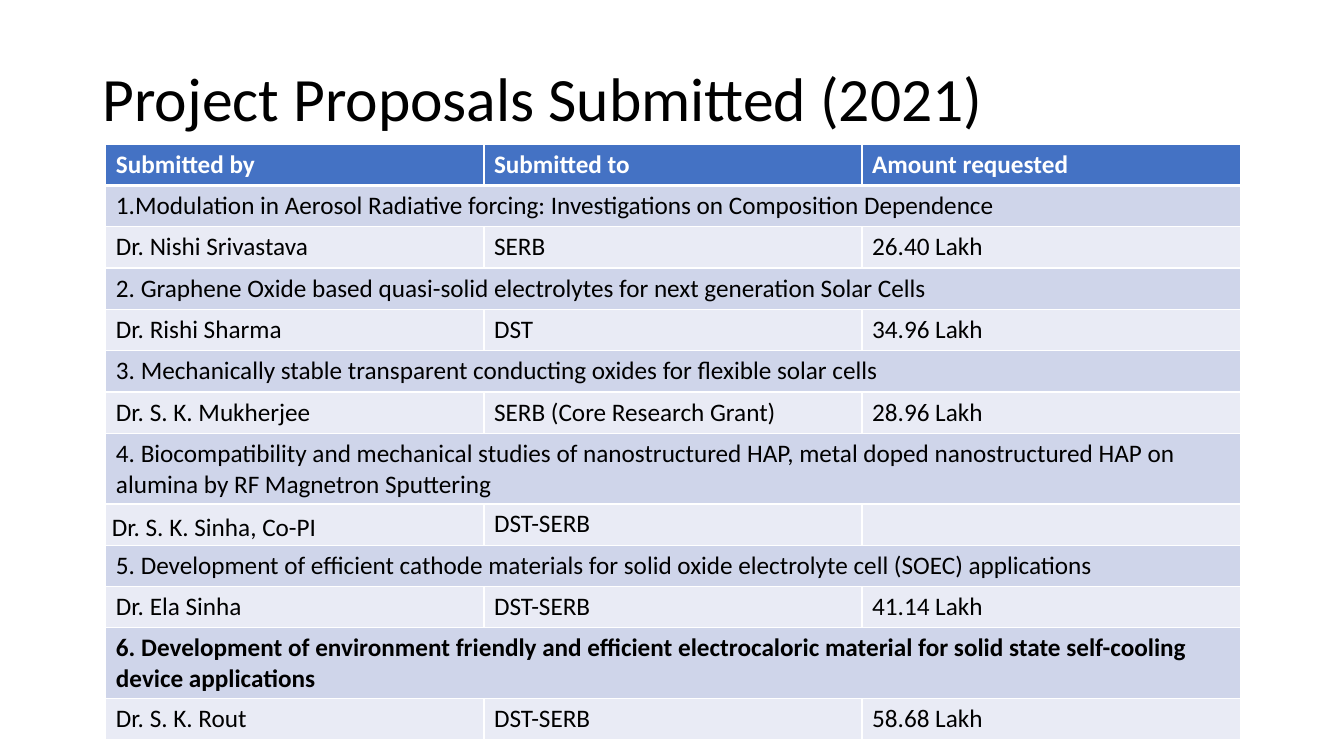
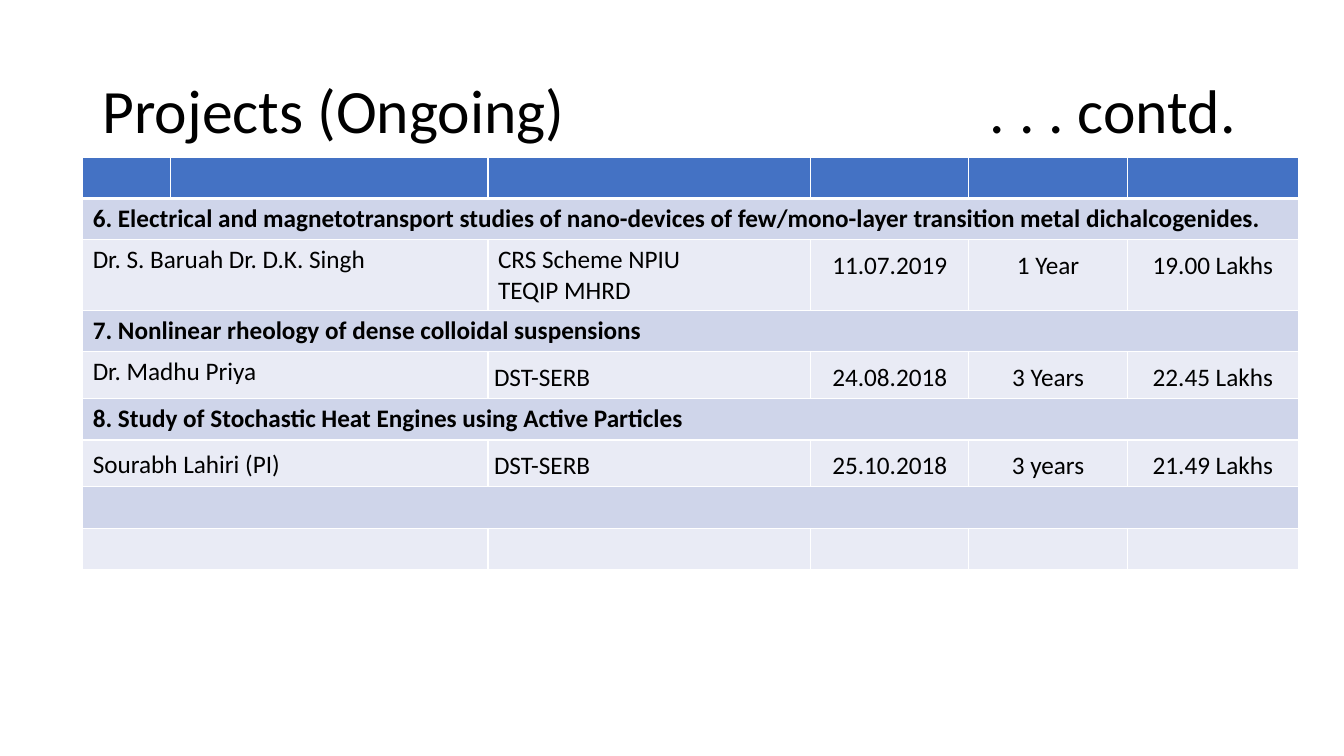
from lxml import etree
from pptx import Presentation
from pptx.dml.color import RGBColor
from pptx.enum.text import MSO_ANCHOR, PP_ALIGN
from pptx.oxml.ns import qn
from pptx.util import Inches, Pt

LEFT, CENTER = PP_ALIGN.LEFT, PP_ALIGN.CENTER
TOP, MIDDLE, BOTTOM = MSO_ANCHOR.TOP, MSO_ANCHOR.MIDDLE, MSO_ANCHOR.BOTTOM

FONT = "Calibri"
BLACK = RGBColor(0x00, 0x00, 0x00)
WHITE = RGBColor(0xFF, 0xFF, 0xFF)
HEADER_BLUE = RGBColor(0x44, 0x72, 0xC4)
PROJECT_BLUE = RGBColor(0xCF, 0xD5, 0xEA)
DETAIL_BLUE = RGBColor(0xE9, 0xEB, 0xF5)
ROW_H = 0.41

# Cell styles: margins (left, top, right, bottom), alignment, spacing, anchor
STYLES = {
    "plain": ((0.1, 0.05, 0.1, 0.05), LEFT, None, TOP),
    "spaced": ((0.1, 0.05, 0.1, 0.05), LEFT, 1.15, TOP),
    "tight": ((0.06, 0.06, 0.06, 0.06), LEFT, 1.15, TOP),
    "center": ((0.06, 0.06, 0.06, 0.06), CENTER, 1.15, TOP),
    "bottom": ((0.06, 0.02, 0.01, 0.02), LEFT, None, BOTTOM),
}

# Each project: title, bold title, then the detail row that follows it
SLIDES = [
    {
        "title": "Project Proposals Submitted (2021)",
        "title_top": 0.28,
        "table_at": (1.05, 1.43),
        "columns": [3.75, 3.75, 3.75],
        "header": ["Submitted by", "Submitted to", "Amount requested"],
        "name_span": 1,
        "projects": [
            ("1.Modulation in Aerosol Radiative forcing: Investigations on Composition Dependence",
             False, ["Dr. Nishi Srivastava", "SERB", "26.40 Lakh"]),
            ("2. Graphene Oxide based quasi-solid electrolytes for next generation Solar Cells",
             False, ["Dr. Rishi Sharma", "DST", "34.96 Lakh"]),
            ("3. Mechanically stable transparent conducting oxides for flexible solar cells",
             False, ["Dr. S. K. Mukherjee", "SERB (Core Research Grant)", "28.96 Lakh"]),
            ("4. Biocompatibility and mechanical studies of nanostructured HAP, metal doped "
             "nanostructured HAP on alumina by RF Magnetron Sputtering",
             False, [("Dr. S. K. Sinha, Co-PI", "bottom"), "DST-SERB", ""]),
            ("5. Development of efficient cathode materials for solid oxide electrolyte cell "
             "(SOEC) applications",
             False, ["Dr. Ela Sinha", "DST-SERB", "41.14 Lakh"]),
            ("6. Development of environment friendly and efficient electrocaloric material "
             "for solid state self-cooling device applications",
             True, ["Dr. S. K. Rout", "DST-SERB", "58.68 Lakh"]),
        ],
    },
    {
        "title": "Projects (Ongoing)\t. . . contd.",
        "title_top": 0.4,
        "table_at": (0.82, 1.56),
        "columns": [0.87, 3.15, 3.2, 1.57, 1.57, 1.7],
        "header": [""] * 6,
        "name_span": 2,
        "projects": [
            ("6. Electrical and magnetotransport studies of nano-devices of few/mono-layer "
             "transition metal dichalcogenides.",
             True, ["Dr. S. Baruah Dr. D.K. Singh", "CRS Scheme NPIU\nTEQIP MHRD",
                    ("11.07.2019", "center"), ("1 Year", "center"), ("19.00 Lakhs", "center")]),
            ("7. Nonlinear rheology of dense colloidal suspensions",
             True, ["Dr. Madhu Priya", ("DST-SERB", "tight"),
                    ("24.08.2018", "center"), ("3 Years", "center"), ("22.45 Lakhs", "center")]),
            ("8. Study of Stochastic Heat Engines using Active Particles",
             True, [("Sourabh Lahiri (PI)", "spaced"), ("DST-SERB", "tight"),
                    ("25.10.2018", "center"), ("3 years", "center"), ("21.49 Lakhs", "center")]),
            ("", False, [""] * 5),
        ],
    },
]


def format_runs(p, size, color, bold=False):
    for r in p.runs:
        r.font.name, r.font.size, r.font.bold = FONT, Pt(size), bold
        r.font.color.rgb = color


def add_title(s, text, top):
    tf = s.shapes.add_textbox(Inches(0.92), Inches(top), Inches(11.5), Inches(1.45)).text_frame
    tf.word_wrap, tf.vertical_anchor = True, MIDDLE
    p = tf.paragraphs[0]
    p.text, p.line_spacing = text, 0.9
    if "\t" in text:
        # A right tab sets the second part against the right edge
        tabs = etree.SubElement(p._p.get_or_add_pPr(), qn("a:tabLst"))
        etree.SubElement(tabs, qn("a:tab"), pos=str(Inches(11.24)), algn="r")
    format_runs(p, 44, BLACK)


def set_borders(cell, bottom, top):
    tc_pr = cell._tc.get_or_add_tcPr()
    for i, (side, width) in enumerate(zip("LRTB", (1, 1, top, bottom))):
        line = etree.Element(qn(f"a:ln{side}"), w=str(Pt(width)))
        fill = etree.SubElement(line, qn("a:solidFill"))
        etree.SubElement(fill, qn("a:srgbClr"), val=str(WHITE))
        tc_pr.insert(i, line)


def fill_cell(cell, content, color=BLACK, bold=False):
    text, style = content if isinstance(content, tuple) else (content, "plain")
    margins, align, spacing, anchor = STYLES[style]
    cell.margin_left, cell.margin_top, cell.margin_right, cell.margin_bottom = map(Inches, margins)
    cell.vertical_anchor = anchor
    cell.text_frame.text = text
    for p in cell.text_frame.paragraphs:
        p.alignment = align
        if spacing:
            p.line_spacing = spacing
        format_runs(p, 18, color, bold)


def add_projects(s, data):
    widths, projects, span = data["columns"], data["projects"], data["name_span"]
    n_cols, n_rows = len(widths), 1 + 2 * len(projects)
    x, y = data["table_at"]
    table = s.shapes.add_table(n_rows, n_cols, Inches(x), Inches(y),
                               Inches(sum(widths)), Inches(ROW_H * n_rows)).table
    for column, width in zip(table.columns, widths):
        column.width = Inches(width)

    # Fills and borders: header, then project and detail rows in turn
    for i, row in enumerate(table.rows):
        row.height = Inches(ROW_H)
        for cell in row.cells:
            cell.fill.solid()
            cell.fill.fore_color.rgb = (HEADER_BLUE if i == 0 else
                                        PROJECT_BLUE if i % 2 else DETAIL_BLUE)
            set_borders(cell, bottom=3 if i == 0 else 1, top=3 if i == 1 else 1)

    # Text
    for c, label in enumerate(data["header"]):
        fill_cell(table.cell(0, c), label, WHITE, True)
    for k, (title, bold, details) in enumerate(projects):
        r = 1 + 2 * k
        table.cell(r, 0).merge(table.cell(r, n_cols - 1))
        fill_cell(table.cell(r, 0), title, bold=bold)
        if span > 1:
            table.cell(r + 1, 0).merge(table.cell(r + 1, span - 1))
        for c, content in enumerate(details):
            fill_cell(table.cell(r + 1, c + span - 1 if c else 0), content)


def main():
    prs = Presentation()
    prs.slide_width, prs.slide_height = Inches(13.33), Inches(7.5)
    for data in SLIDES:
        s = prs.slides.add_slide(prs.slide_layouts[6])
        add_title(s, data["title"], data["title_top"])
        add_projects(s, data)
    prs.save("out.pptx")


if __name__ == "__main__":
    main()
